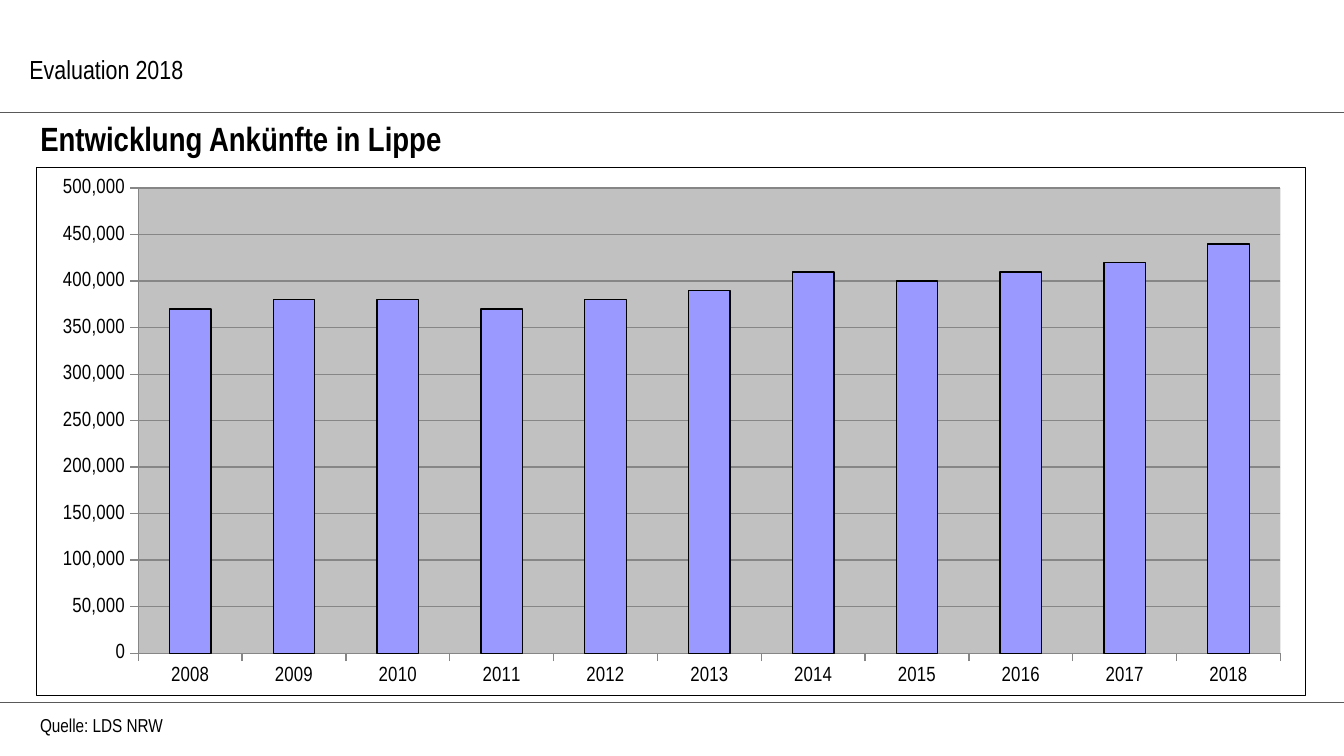
from lxml import etree
from pptx import Presentation
from pptx.chart.data import CategoryChartData
from pptx.dml.color import RGBColor
from pptx.enum.chart import XL_CHART_TYPE, XL_TICK_MARK
from pptx.enum.shapes import MSO_CONNECTOR
from pptx.enum.text import MSO_ANCHOR, PP_ALIGN
from pptx.oxml import parse_xml
from pptx.oxml.ns import nsdecls, qn
from pptx.util import Inches, Pt

COLUMN_CLUSTERED = XL_CHART_TYPE.COLUMN_CLUSTERED
TICK_OUTSIDE = XL_TICK_MARK.OUTSIDE
STRAIGHT = MSO_CONNECTOR.STRAIGHT
TOP = MSO_ANCHOR.TOP
LEFT = PP_ALIGN.LEFT

BLACK = RGBColor(0x00, 0x00, 0x00)
RULE_GRAY = RGBColor(0x59, 0x59, 0x59)
GRID_GRAY = RGBColor(0x86, 0x86, 0x86)
BAR_BLUE = RGBColor(0x99, 0x99, 0xFF)
PLOT_GRAY = RGBColor(0xC1, 0xC1, 0xC1)
FONT = "Arial Narrow"

SLIDE_WIDTH = Inches(10)
SLIDE_HEIGHT = SLIDE_WIDTH * 9 // 16

YEARS = [str(year) for year in range(2008, 2019)]
ARRIVALS = [370000, 380000, 380000, 370000, 380000, 390000,
            410000, 400000, 410000, 420000, 440000]


def write_text(shape, text, size, bold=False, wrap=True):
    frame = shape.text_frame
    frame.text = text
    frame.word_wrap = wrap
    frame.vertical_anchor = TOP
    frame.margin_left = frame.margin_right = Inches(0.1)
    frame.margin_top = frame.margin_bottom = Inches(0.05)
    paragraph = frame.paragraphs[0]
    paragraph.alignment = LEFT
    font = paragraph.runs[0].font
    font.name, font.size, font.bold = FONT, Pt(size), bold
    font.color.rgb = BLACK


def place(shape, left, top, width, height):
    shape.left, shape.top = Inches(left), Inches(top)
    shape.width, shape.height = Inches(width), Inches(height)


def add_text(slide, text, left, top, width, height, **text_format):
    box = slide.shapes.add_textbox(Inches(left), Inches(top), Inches(width), Inches(height))
    write_text(box, text, **text_format)


def format_line(line, color, width):
    line.color.rgb = color
    line.width = Pt(width)


def add_rule(slide, top):
    rule = slide.shapes.add_connector(STRAIGHT, 0, Inches(top), SLIDE_WIDTH, Inches(top))
    format_line(rule.line, RULE_GRAY, 0.5)
    etree.SubElement(rule.element.spPr, qn("a:effectLst"))


def style_plot_area(chart):
    """Fix the inner plot position, fill the plot area and frame the chart."""
    plot_area = chart.element.find(qn("c:chart")).find(qn("c:plotArea"))
    for layout in plot_area.findall(qn("c:layout")):
        plot_area.remove(layout)
    plot_area.insert(0, parse_xml(
        f'<c:layout {nsdecls("c")}><c:manualLayout><c:layoutTarget val="inner"/>'
        '<c:xMode val="edge"/><c:yMode val="edge"/><c:x val="0.08"/><c:y val="0.04"/>'
        '<c:w val="0.9"/><c:h val="0.88"/></c:manualLayout></c:layout>'))
    plot_area.append(parse_xml(
        f'<c:spPr {nsdecls("c", "a")}><a:solidFill><a:srgbClr val="{PLOT_GRAY}"/>'
        '</a:solidFill><a:ln><a:noFill/></a:ln></c:spPr>'))
    chart.element.find(qn("c:chart")).addnext(parse_xml(
        f'<c:spPr {nsdecls("c", "a")}><a:noFill/><a:ln w="{Pt(0.5)}"><a:solidFill>'
        f'<a:srgbClr val="{BLACK}"/></a:solidFill></a:ln></c:spPr>'))


def add_arrivals_chart(slide, left, top, width, height):
    data = CategoryChartData(number_format="#,##0")
    data.categories = YEARS
    data.add_series("Series 1", ARRIVALS)
    chart = slide.shapes.add_chart(COLUMN_CLUSTERED, Inches(left), Inches(top),
                                   Inches(width), Inches(height), data).chart
    chart.has_title = False
    chart.has_legend = False
    chart.font.name, chart.font.size = FONT, Pt(11)
    chart.font.color.rgb = BLACK

    # Axes and gridlines
    for axis in (chart.category_axis, chart.value_axis):
        axis.major_tick_mark = TICK_OUTSIDE
        format_line(axis.format.line, GRID_GRAY, 0.75)
    value_axis = chart.value_axis
    value_axis.minimum_scale, value_axis.maximum_scale = 0, 500000
    value_axis.major_unit = 50000
    value_axis.tick_labels.number_format = "#,##0"
    value_axis.tick_labels.number_format_is_linked = False
    value_axis.has_major_gridlines = True
    format_line(value_axis.major_gridlines.format.line, GRID_GRAY, 0.75)

    # Columns
    plot = chart.plots[0]
    plot.gap_width = 150
    plot.vary_by_categories = False
    columns = plot.series[0].format
    columns.fill.solid()
    columns.fill.fore_color.rgb = BAR_BLUE
    format_line(columns.line, BLACK, 0.75)
    style_plot_area(chart)


def main():
    presentation = Presentation()
    presentation.slide_width, presentation.slide_height = SLIDE_WIDTH, SLIDE_HEIGHT
    slide = presentation.slides.add_slide(presentation.slide_layouts[5])

    # Rules below the header and above the source
    for top in (0.84, 5.23):
        add_rule(slide, top)

    # Title, header and source
    title = slide.shapes.title
    place(title, 0.2, 0.83, 9.45, 0.4)
    write_text(title, "Entwicklung Ankünfte in Lippe", size=18, bold=True)
    add_text(slide, "Evaluation 2018", 0.12, 0.35, 9.69, 0.64, size=14)
    add_text(slide, "Quelle: LDS NRW", 0.2, 5.26, 1.42, 0.27, size=10, wrap=False)

    add_arrivals_chart(slide, 0.27, 1.24, 9.45, 3.94)
    presentation.save("out.pptx")


if __name__ == "__main__":
    main()
